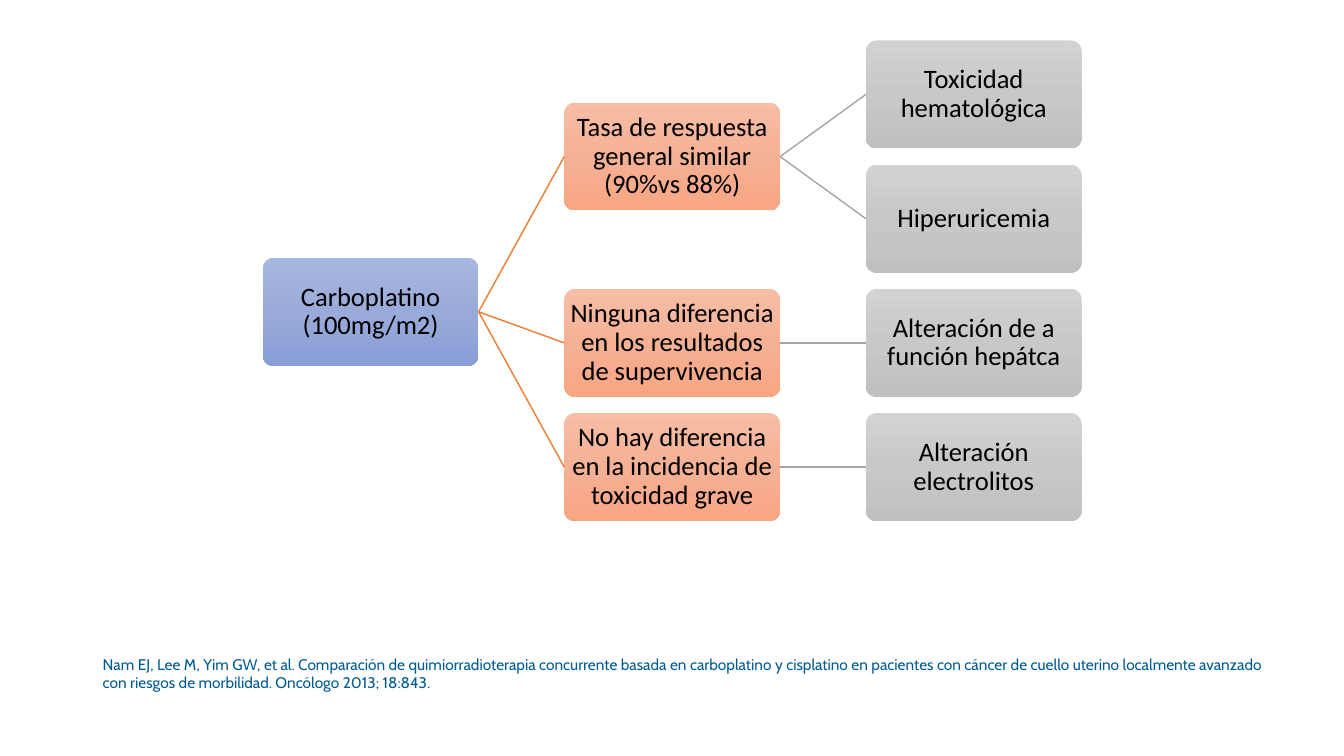
from copy import deepcopy

from lxml.etree import SubElement
from pptx import Presentation
from pptx.dml.color import RGBColor
from pptx.enum.shapes import MSO_CONNECTOR, MSO_SHAPE
from pptx.enum.text import MSO_ANCHOR, PP_ALIGN
from pptx.oxml.ns import qn
from pptx.util import Cm, Pt

COLORS = {"text": "000000", "citation": "005B93"}

# One style per tree level: gradient of the boxes, line towards the parent
LEVELS = [
    {"fill": ["A8B7DF", "9AABD9", "889ED7"], "line": None},
    {"fill": ["F7BDA5", "F5B196", "F8A582"], "line": "ED7D31"},
    {"fill": ["D2D2D2", "C8C8C8", "C0C0C0"], "line": "A5A5A5"},
]

# Tree layout in centimetres
LEFT, TOP = 6.62, 1.02
BOX_WIDTH, BOX_HEIGHT = 5.44, 2.72
COLUMN_STEP, ROW_STEP = 7.6, 3.13

# Each node is (text, children)
TREE = ("Carboplatino (100mg/m2)", [
    ("Tasa de respuesta general similar (90%vs 88%)", [
        ("Toxicidad hematológica", []),
        ("Hiperuricemia", []),
    ]),
    ("Ninguna diferencia en los resultados de supervivencia", [
        ("Alteración de a función hepátca", []),
    ]),
    ("No hay diferencia en la incidencia de toxicidad grave", [
        ("Alteración electrolitos", []),
    ]),
])
CITATION = (
    "Nam EJ, Lee M, Yim GW, et al. Comparación de quimiorradioterapia "
    "concurrente basada en carboplatino y cisplatino en pacientes con cáncer "
    "de cuello uterino localmente avanzado con riesgos de morbilidad. "
    "Oncólogo 2013; 18:843."
)


def set_font(para, name, size, color):
    para.font.name = name
    para.font.size = Pt(size)
    para.font.color.rgb = RGBColor.from_string(color)


def fill_gradient(box, colors):
    """Fill from top to bottom with three evenly spaced colours."""
    box.fill.gradient()
    box.fill.gradient_angle = 270
    first_stop = box._element.spPr.find(".//" + qn("a:gs"))
    first_stop.addnext(deepcopy(first_stop))
    for index, stop in enumerate(box.fill.gradient_stops):
        stop.position = index / 2
        stop.color.rgb = RGBColor.from_string(colors[index])


def add_box(page, text, level, row):
    box = page.shapes.add_shape(
        MSO_SHAPE.ROUNDED_RECTANGLE,
        Cm(LEFT + level * COLUMN_STEP), Cm(TOP + row * ROW_STEP),
        Cm(BOX_WIDTH), Cm(BOX_HEIGHT))
    box.adjustments[0] = 0.1
    box.shadow.inherit = False
    box.line.fill.background()
    fill_gradient(box, LEVELS[level]["fill"])

    frame = box.text_frame
    frame.word_wrap = True
    frame.vertical_anchor = MSO_ANCHOR.MIDDLE
    frame.margin_left = frame.margin_right = Cm(0.03)
    frame.margin_top = frame.margin_bottom = Cm(0.03)
    para = frame.paragraphs[0]
    para.text = text
    para.alignment = PP_ALIGN.CENTER
    para.line_spacing = 0.9
    set_font(para, "Calibri", 19, COLORS["text"])
    return box


def add_link(page, parent, child, color):
    """Join the right side of the parent to the left side of the child."""
    link = page.shapes.add_connector(MSO_CONNECTOR.STRAIGHT, 0, 0, 0, 0)
    link.begin_connect(parent, 3)
    link.end_connect(child, 1)
    link.line.color.rgb = RGBColor.from_string(color)
    link.line.width = Pt(1)
    SubElement(link._element.spPr, qn("a:effectLst"))


def add_branch(page, node, level, next_row):
    """Draw a node and its children; return its box, its row and the next free row."""
    text, children = node
    child_boxes, child_rows = [], []
    for child in children:
        child_box, child_row, next_row = add_branch(page, child, level + 1, next_row)
        child_boxes.append(child_box)
        child_rows.append(child_row)

    # A parent sits midway between its first and last child
    if children:
        row = (child_rows[0] + child_rows[-1]) / 2
    else:
        row, next_row = next_row, next_row + 1
    box = add_box(page, text, level, row)
    for child_box in child_boxes:
        add_link(page, box, child_box, LEVELS[level + 1]["line"])
    return box, row, next_row


def add_citation(page):
    box = page.shapes.add_textbox(Cm(2.34), Cm(16.38), Cm(29.95), Cm(1.2))
    box.text_frame.word_wrap = True
    para = box.text_frame.paragraphs[0]
    para.text = CITATION
    set_font(para, "Cabin", 11, COLORS["citation"])


def main():
    deck = Presentation()
    deck.slide_width, deck.slide_height = Cm(33.87), Cm(19.05)
    page = deck.slides.add_slide(deck.slide_layouts[6])
    add_branch(page, TREE, 0, 0)
    add_citation(page)
    deck.save("out.pptx")


if __name__ == "__main__":
    main()
